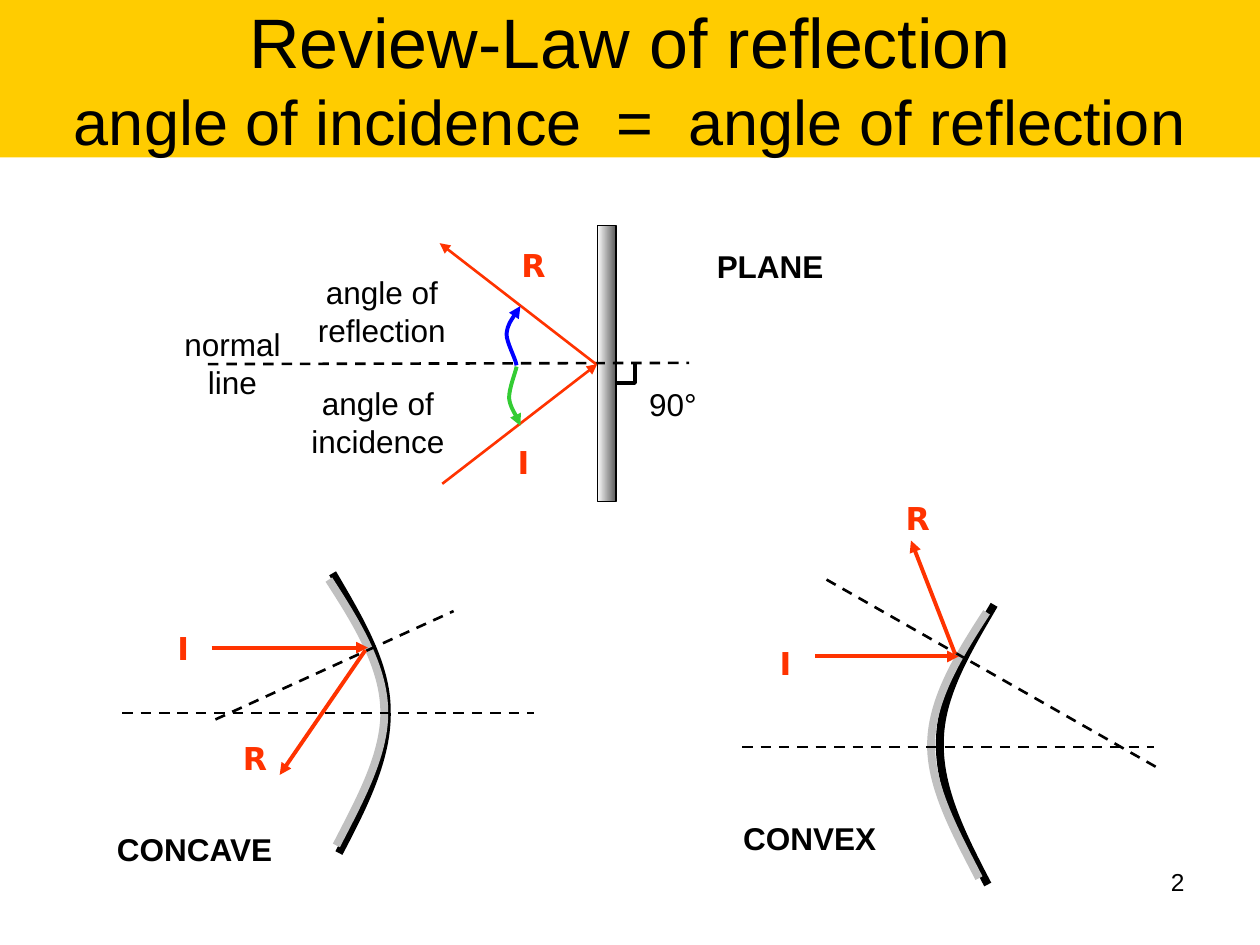
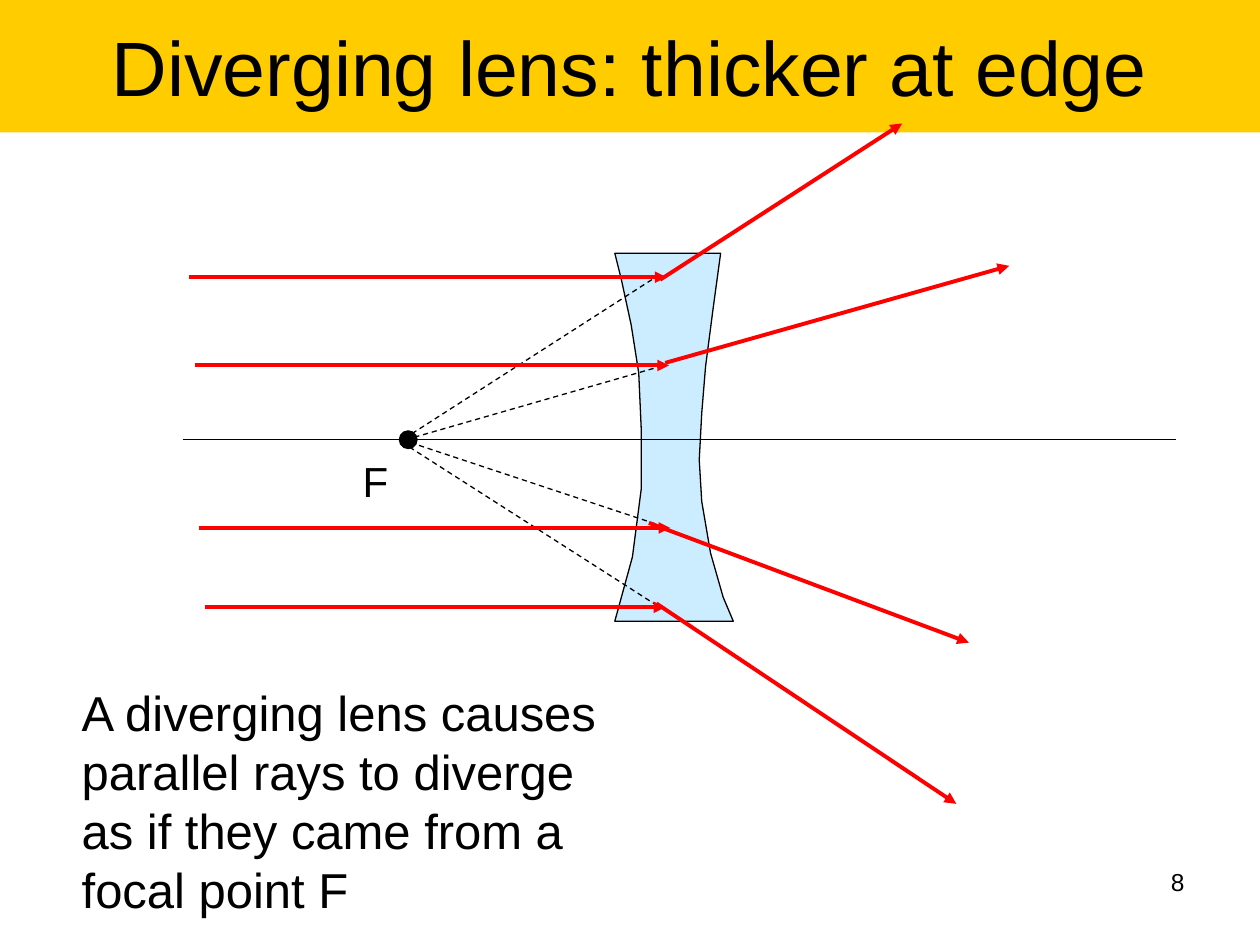
import pptx
import pptx.util
import pptx.dml.color
import pptx.enum.dml
import pptx.enum.shapes
import pptx.enum.text
import pptx.oxml
import pptx.oxml.ns

PX = 9144  # 100 px to the inch
SHAPE = pptx.enum.shapes.MSO_SHAPE
ALIGN = pptx.enum.text.PP_ALIGN
FIT = pptx.enum.text.MSO_AUTO_SIZE
COLORS = {
    "band": "FFCC00", "ink": "000000", "white": "FFFFFF", "shade": "595959",
    "gloss": "C0C0C0", "ray": "FF3300", "lens_ray": "FF0000",
    "incidence": "33CC33", "reflection": "0000FF", "glass": "CCECFF",
}
MIRROR_CURVE = [(0, 0), (21, 36), (43, 72), (43, 109), (44, 146), (25, 184), (5, 222)]
GLOSS_CURVE = [(0, 0), (22, 34), (43, 68), (44, 103), (45, 138), (25, 174), (6, 211)]


def rgb(name):
    return pptx.dml.color.RGBColor.from_string(COLORS[name])


def element(tag):
    return pptx.oxml.parse_xml(f'<a:{tag} {pptx.oxml.ns.nsdecls("a")}/>')


def fill(shape, color):
    shape.fill.solid()
    shape.fill.fore_color.rgb = rgb(color)


def add_run(p, words, size, color="ink", font="Arial", bold=False):
    r = p.add_run()
    r.text = words
    r.font.size = pptx.util.Pt(size)
    r.font.name = font
    r.font.bold = bold
    r.font.color.rgb = rgb(color)


def text(s, box, at, lines, size=18, wrap=False, align=ALIGN.LEFT, **style):
    """Text box at (left, top, width, height) inside the box."""
    x, y, w, h = at
    tb = s.shapes.add_textbox((box[0] + x) * PX, (box[1] + y) * PX, w * PX, h * PX)
    tf = tb.text_frame
    tf.word_wrap = wrap
    tf.auto_size = FIT.NONE if wrap else FIT.SHAPE_TO_FIT_TEXT
    for i, words in enumerate(lines):
        p = tf.add_paragraph() if i else tf.paragraphs[0]
        p.alignment = align
        add_run(p, words, size, **style)


def ray_label(s, box, letter, at):
    width = 34 if letter == "I" else 40
    text(s, box, (*at, width, 40), [letter], color="ray", font="DejaVu Sans", bold=True)


def style_line(shape, color, width, dash=False, arrow=None):
    """Line format; arrow is headEnd (at the start) or tailEnd (at the end)."""
    shape.line.color.rgb = rgb(color)
    shape.line.width = pptx.util.Pt(width)
    if dash:
        shape.line.dash_style = pptx.enum.dml.MSO_LINE.DASH
    if arrow:
        end = element(arrow)
        end.set("type", "triangle")
        shape._element.spPr.find(pptx.oxml.ns.qn("a:ln")).append(end)


def line(s, box, start, end, color="ink", width=1.5, **style):
    x, y = box
    cx = s.shapes.add_connector(
        pptx.enum.shapes.MSO_CONNECTOR.STRAIGHT,
        (x + start[0]) * PX, (y + start[1]) * PX, (x + end[0]) * PX, (y + end[1]) * PX)
    style_line(cx, color, width, **style)
    cx._element.spPr.append(element("effectLst"))


def outline(s, box, points, color="ink", width=0.75, inside=None, **style):
    """Freeform through the points, closed when it has an inside colour."""
    pts = [((box[0] + x) * PX, (box[1] + y) * PX) for x, y in points]
    fb = s.shapes.build_freeform(*pts[0])
    fb.add_line_segments(pts[1:], close=inside is not None)
    sp = fb.convert_to_shape()
    sp.shadow.inherit = False
    if inside:
        fill(sp, inside)
    else:
        sp.fill.background()
    style_line(sp, color, width, **style)
    return sp


def curve(s, box, points, color, width, **style):
    """Chain of cubic curves: each three points after the first make one."""
    sp = outline(s, box, points, color, width, **style)
    segments = list(sp._element.iter(pptx.oxml.ns.qn("a:lnTo")))
    for i in range(0, len(segments), 3):
        cubic = element("cubicBezTo")
        segments[i].addprevious(cubic)
        for segment in segments[i:i + 3]:
            cubic.append(segment[0])
            segment.getparent().remove(segment)


def preset(s, box, kind, at):
    x, y, w, h = at
    sp = s.shapes.add_shape(kind, (box[0] + x) * PX, (box[1] + y) * PX, w * PX, h * PX)
    sp.shadow.inherit = False
    style_line(sp, "ink", 0.75)
    return sp


def new_slide(prs, title_lines, band_height):
    """Slide with a title band; title_lines holds (words, size) pairs."""
    s = prs.slides.add_slide(prs.slide_layouts[5])
    title = s.shapes.title
    title.left, title.top, title.width, title.height = 0, 0, 1000 * PX, band_height * PX
    fill(title, "band")
    tf = title.text_frame
    tf.auto_size = FIT.NONE
    tf.vertical_anchor = pptx.enum.text.MSO_ANCHOR.MIDDLE
    p = tf.paragraphs[0]
    p.alignment = ALIGN.CENTER
    for i, (words, size) in enumerate(title_lines):
        if i:
            p.add_line_break()
        add_run(p, words, size)
    return s


def page_number(s, number):
    text(s, (717, 683), (0, 0, 233, 52), [number], 14, wrap=True, align=ALIGN.RIGHT)


def curved_mirror(s, box, name, name_at, tip, gloss_tip, bulge, axis, normal,
                  incident, reflected, i_at, r_at):
    """Curved mirror with its rays; bulge is 1 to the right, -1 to the left."""
    g = s.shapes.add_group_shape()
    text(g, box, name_at, [name], bold=True)
    for shape, (x, y), color in ((MIRROR_CURVE, tip, "ink"), (GLOSS_CURVE, gloss_tip, "gloss")):
        curve(g, box, [(x + bulge * dx, y + dy) for dx, dy in shape], color, 4.5)
    for guide, ray in ((axis, incident), (normal, reflected)):
        line(g, box, *guide, dash=True)
        line(g, box, *ray, color="ray", width=2.25, arrow="tailEnd")
    ray_label(g, box, "I", i_at)
    ray_label(g, box, "R", r_at)


def plane_mirror(s, box):
    g = s.shapes.add_group_shape()
    mirror = preset(g, box, SHAPE.RECTANGLE, (338, 0, 15, 219))
    mirror.fill.gradient()
    mirror.fill.gradient_angle = 0
    for stop, color in zip(mirror.fill.gradient_stops, ("white", "shade")):
        stop.color.rgb = rgb(color)
    line(g, box, (29, 110), (411, 109), dash=True)
    line(g, box, (215, 205), (338, 110), "ray", arrow="tailEnd")
    line(g, box, (213, 14), (337, 110), "ray", arrow="headEnd")
    arcs = {
        "incidence": [(277, 159), (276, 155), (269, 144), (268, 137),
                      (268, 129), (273, 117), (274, 112)],
        "reflection": [(277, 64), (275, 67), (267, 78), (266, 86),
                       (266, 93), (273, 105), (274, 111)],
    }
    for color, points in arcs.items():
        curve(g, box, points, color, 2.25, arrow="headEnd")
    ray_label(g, box, "I", (265, 168))
    ray_label(g, box, "R", (268, 11))
    text(g, box, (423, 12, 105, 40), ["PLANE"], bold=True)
    for at, lines in (
        ((0, 74, 97, 70), ["normal", "line"]),
        ((101, 121, 126, 70), ["angle of", "incidence"]),
        ((106, 33, 122, 70), ["angle of", "reflection"]),
    ):
        text(g, box, at, lines, align=ALIGN.CENTER)
    outline(g, box, [(368, 109), (368, 125), (352, 125)], width=2.25)
    text(g, box, (369, 122, 58, 40), ["90°"], align=ALIGN.CENTER)


def diverging_lens(s, box):
    outline(s, box, [
        (343, 103), (427, 103), (421, 147), (415, 193), (412, 230), (410, 267),
        (412, 300), (419, 341), (429, 376), (437, 395), (343, 395), (357, 344),
        (364, 290), (364, 243), (362, 198), (356, 160), (348, 123)], inside="glass")
    line(s, box, (0, 251), (788, 251), width=0.75)
    fill(preset(s, box, SHAPE.OVAL, (172, 244, 14, 14)), "ink")
    virtual = [((176, 250), (377, 121)), ((177, 251), (382, 192)),
               ((174, 251), (382, 320)), ((174, 253), (374, 381))]
    incident = [((x1, y), (x2, y)) for x1, x2, y in (
        (5, 384, 122), (10, 386, 192), (13, 387, 321), (18, 383, 384))]
    refracted = [((379, 124), (571, 0)), ((383, 190), (656, 113)),
                 ((370, 317), (624, 412)), ((376, 381), (614, 540))]
    g = s.shapes.add_group_shape()
    for ends in virtual:
        line(g, box, *ends, width=0.75, dash=True)
    g = s.shapes.add_group_shape()
    for ends in incident + refracted:
        line(g, box, *ends, color="lens_ray", width=2.25, arrow="tailEnd")
    text(s, box, (133, 259, 40, 50), ["F"], 24)


def reflection_slide(prs):
    s = new_slide(prs, [("Review-Law of reflection", 40),
                        ("angle of incidence  =  angle of reflection", 36)], 125)
    curved_mirror(
        s, (83, 455), "CONCAVE", (0, 199, 145, 40), tip=(181, 0), gloss_tip=(178, 5), bulge=1,
        axis=((14, 111), (341, 111)), normal=((88, 116), (277, 30)),
        incident=((85, 59), (209, 59)), reflected=((207, 61), (139, 160)),
        i_at=(48, 39), r_at=(100, 127))
    curved_mirror(
        s, (580, 391), "CONVEX", (0, 254, 126, 40), tip=(209, 89), gloss_tip=(203, 95), bulge=-1,
        axis=((9, 202), (336, 202)), normal=((76, 69), (338, 218)),
        incident=((67, 130), (181, 130)), reflected=((178, 128), (143, 38)),
        i_at=(29, 115), r_at=(129, 0))
    plane_mirror(s, (136, 179))
    page_number(s, "2")


def lens_slide(prs):
    s = new_slide(prs, [("Diverging lens: thicker at edge", 44)], 105)
    diverging_lens(s, (145, 98))
    text(s, (55, 537), (0, 0, 432, 197), [
        "A diverging lens causes", "parallel rays to diverge",
        "as if they came from a", "focal point F"], 28)
    page_number(s, "8")


def main():
    prs = pptx.Presentation()
    prs.slide_width, prs.slide_height = 1000 * PX, 750 * PX
    reflection_slide(prs)
    lens_slide(prs)
    prs.save("out.pptx")


if __name__ == "__main__":
    main()
